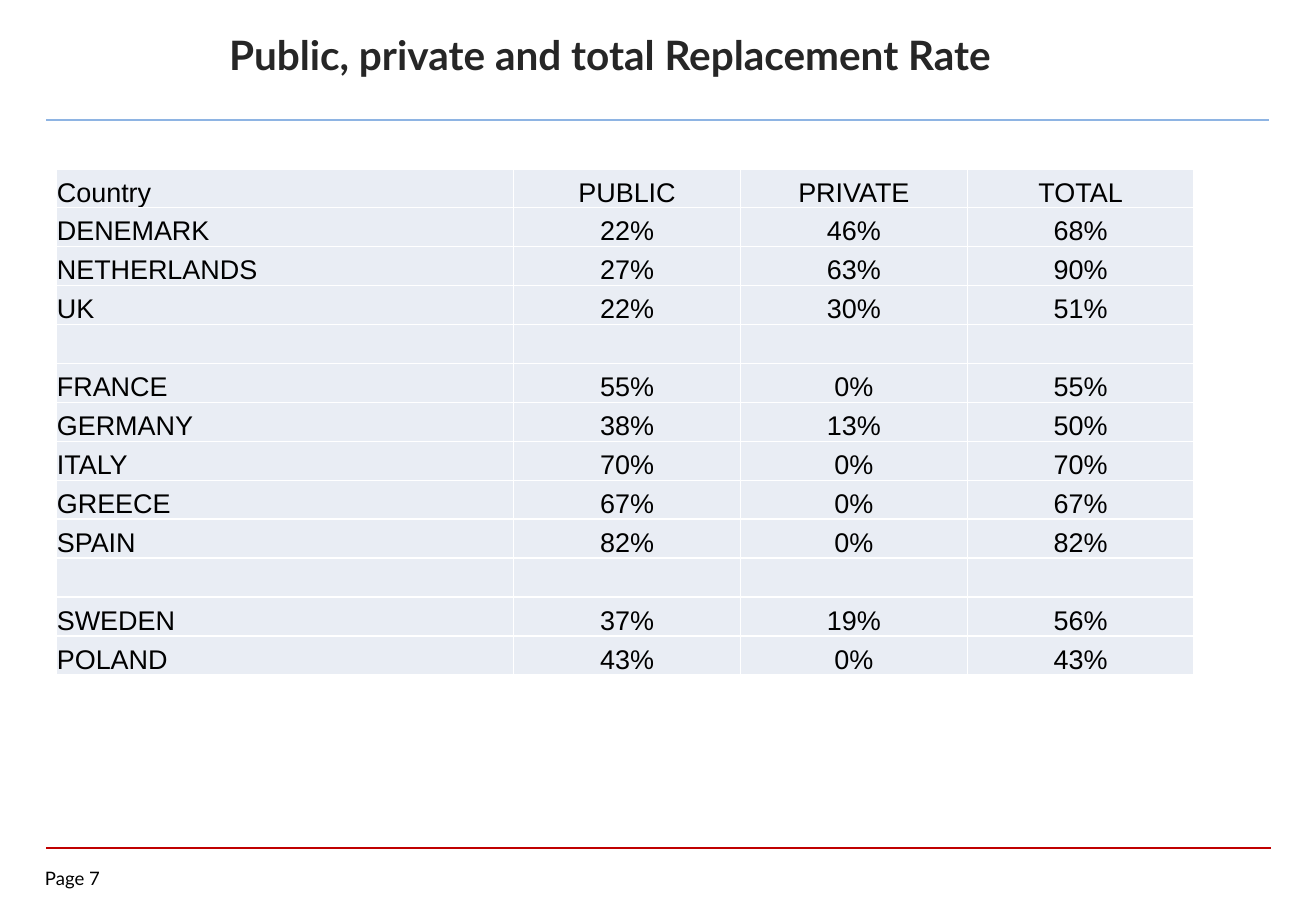
from dataclasses import dataclass

from lxml import etree
from pptx import Presentation
from pptx.dml.color import RGBColor
from pptx.enum.shapes import MSO_CONNECTOR
from pptx.enum.text import MSO_ANCHOR, PP_ALIGN
from pptx.oxml.ns import qn
from pptx.slide import Slide
from pptx.table import _Cell
from pptx.text.text import TextFrame
from pptx.util import Cm, Pt

STRAIGHT = MSO_CONNECTOR.STRAIGHT
TOP, BOTTOM = MSO_ANCHOR.TOP, MSO_ANCHOR.BOTTOM
LEFT, CENTER = PP_ALIGN.LEFT, PP_ALIGN.CENTER

BLACK = RGBColor(0x00, 0x00, 0x00)
WHITE = RGBColor(0xFF, 0xFF, 0xFF)
DARK_GREY = RGBColor(0x26, 0x26, 0x26)
RED = RGBColor(0xC0, 0x00, 0x00)
LIGHT_BLUE = RGBColor(0x8E, 0xB4, 0xE3)
CELL_FILL = RGBColor(0xE9, 0xED, 0xF4)

TITLE_LAYOUT = 5
COLUMN_WIDTHS = (9.57, 4.74, 4.74, 4.74)
TABLE_HEIGHT = 10.59
HEADINGS = ("Country", "PUBLIC", "PRIVATE", "TOTAL")
GAP = ("", "", "", "")


@dataclass(frozen=True)
class Rule:
    right: float
    y: float
    color: RGBColor
    weight: float


@dataclass(frozen=True)
class CountryRates:
    country: str
    public: int
    private: int
    total: int

    def cells(self) -> tuple[str, ...]:
        rates = (self.public, self.private, self.total)
        return (self.country, *(f"{rate}%" for rate in rates))


RULES = (
    Rule(26.57, 17.73, RED, 1),
    Rule(26.52, 2.51, LIGHT_BLUE, 1.5),
)
COUNTRY_GROUPS = (
    (
        CountryRates("DENEMARK", 22, 46, 68),
        CountryRates("NETHERLANDS", 27, 63, 90),
        CountryRates("UK", 22, 30, 51),
    ),
    (
        CountryRates("FRANCE", 55, 0, 55),
        CountryRates("GERMANY", 38, 13, 50),
        CountryRates("ITALY", 70, 0, 70),
        CountryRates("GREECE", 67, 0, 67),
        CountryRates("SPAIN", 82, 0, 82),
    ),
    (
        CountryRates("SWEDEN", 37, 19, 56),
        CountryRates("POLAND", 43, 0, 43),
    ),
)


def set_text(frame: TextFrame, text: str, font_name: str, size: float, color: RGBColor,
             alignment: PP_ALIGN = LEFT, bold: bool = False) -> None:
    frame.text = text
    paragraph = frame.paragraphs[0]
    paragraph.alignment = alignment
    for run in paragraph.runs:
        run.font.name = font_name
        run.font.size = Pt(size)
        run.font.bold = bold
        run.font.color.rgb = color


def add_rule(slide: Slide, rule: Rule) -> None:
    connector = slide.shapes.add_connector(
        STRAIGHT, Cm(0.97), Cm(rule.y), Cm(rule.right), Cm(rule.y))
    connector.line.color.rgb = rule.color
    connector.line.width = Pt(rule.weight)
    etree.SubElement(connector._element.spPr, qn("a:effectLst"))


def add_title(slide: Slide) -> None:
    title = slide.shapes.title
    title.left, title.top, title.width, title.height = Cm(3.15), Cm(0.51), Cm(19.2), Cm(1.8)
    title.text_frame.vertical_anchor = TOP
    set_text(title.text_frame, "Public, private and total Replacement Rate",
             "Lato", 24, DARK_GREY, CENTER, bold=True)


def add_page_label(slide: Slide) -> None:
    label = slide.shapes.add_textbox(Cm(0.94), Cm(18.14), Cm(1.85), Cm(0.56))
    frame = label.text_frame
    frame.margin_left = frame.margin_top = frame.margin_right = frame.margin_bottom = 0
    set_text(frame, "Page 7", "Lato", 11, BLACK)


def add_borders(cell: _Cell) -> None:
    """Put a white 1 pt line on each side; lines must precede the cell's fill."""
    properties = cell._tc.get_or_add_tcPr()
    for index, side in enumerate(("lnL", "lnR", "lnT", "lnB")):
        line = etree.Element(qn(f"a:{side}"), w=str(Pt(1)))
        fill = etree.SubElement(line, qn("a:solidFill"))
        etree.SubElement(fill, qn("a:srgbClr"), val=str(WHITE))
        properties.insert(index, line)


def format_cell(cell: _Cell, text: str, alignment: PP_ALIGN) -> None:
    cell.margin_left = cell.margin_top = cell.margin_right = Cm(0.02)
    cell.margin_bottom = 0
    cell.vertical_anchor = BOTTOM
    cell.fill.solid()
    cell.fill.fore_color.rgb = CELL_FILL
    add_borders(cell)
    set_text(cell.text_frame, text, "Arial", 16, BLACK, alignment)


def table_rows() -> list[tuple[str, ...]]:
    rows = [HEADINGS]
    for index, group in enumerate(COUNTRY_GROUPS):
        if index:
            rows.append(GAP)
        rows.extend(rates.cells() for rates in group)
    return rows


def add_rate_table(slide: Slide) -> None:
    rows = table_rows()
    table = slide.shapes.add_table(
        len(rows), len(HEADINGS), Cm(1.17), Cm(3.53),
        Cm(sum(COLUMN_WIDTHS)), Cm(TABLE_HEIGHT)).table
    table.first_row = False
    table.horz_banding = False
    for column, width in zip(table.columns, COLUMN_WIDTHS):
        column.width = Cm(width)
    for row_index, row in enumerate(rows):
        table.rows[row_index].height = Cm(TABLE_HEIGHT / len(rows))
        for column_index, text in enumerate(row):
            format_cell(table.cell(row_index, column_index), text,
                        CENTER if column_index else LEFT)


def main() -> None:
    presentation = Presentation()
    presentation.slide_width, presentation.slide_height = Cm(27.51), Cm(19.05)
    slide = presentation.slides.add_slide(presentation.slide_layouts[TITLE_LAYOUT])
    for rule in RULES:
        add_rule(slide, rule)
    add_page_label(slide)
    add_title(slide)
    add_rate_table(slide)
    presentation.save("out.pptx")


if __name__ == "__main__":
    main()
